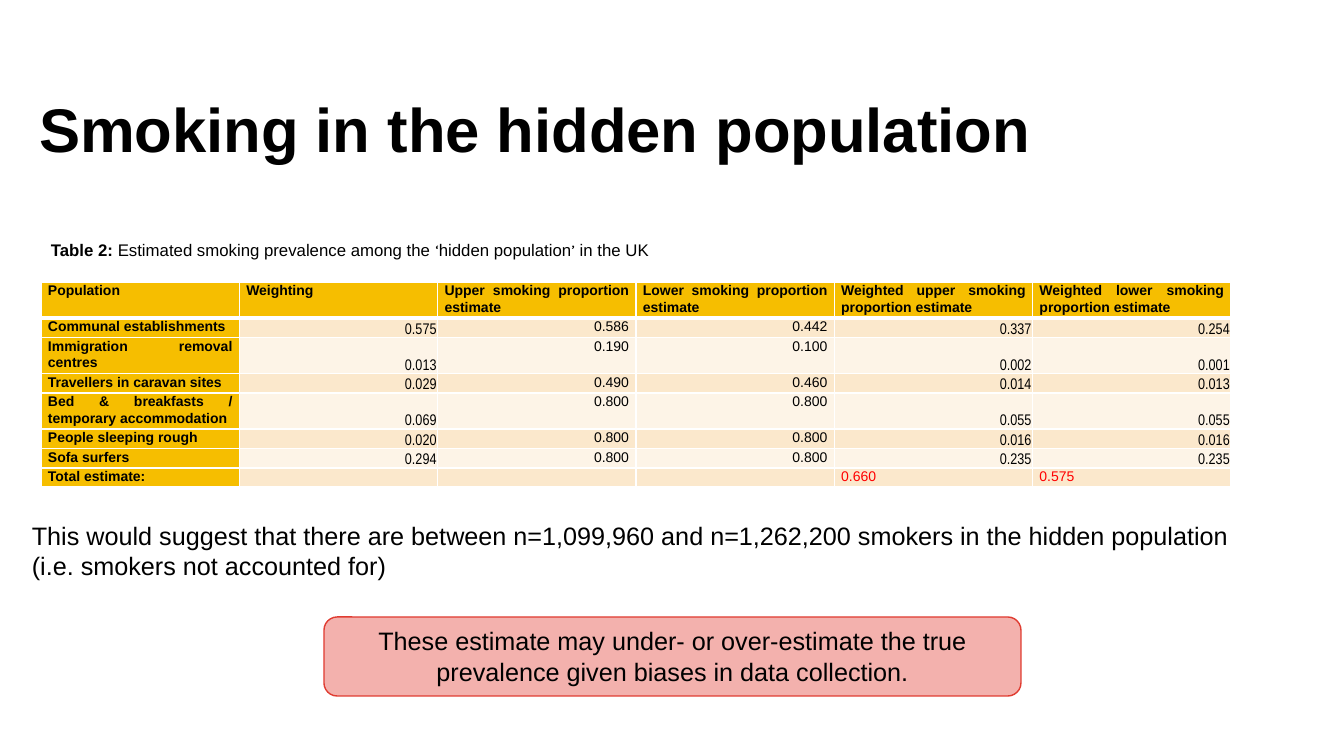
from lxml import etree
from pptx import Presentation, util as u
from pptx.dml.color import RGBColor
from pptx.enum import shapes, text
from pptx.oxml import ns

PX = 914400 / 100.8
BLACK = RGBColor(0x00, 0x00, 0x00)
WHITE = RGBColor(0xFF, 0xFF, 0xFF)
RED = RGBColor(0xFF, 0x00, 0x00)
GOLD = RGBColor(0xF6, 0xBE, 0x00)
BANDS = [RGBColor(0xFD, 0xF4, 0xE7), RGBColor(0xFB, 0xE8, 0xCC)]
PINK = RGBColor(0xF3, 0xB1, 0xAD)
CRIMSON = RGBColor(0xE0, 0x3C, 0x31)


def px(*lengths):
    return [round(length * PX) for length in lengths]


def style(span, size, bold=False, color=BLACK, name="Arial"):
    span.font.size = u.Pt(size)
    span.font.bold = bold
    span.font.color.rgb = color
    span.font.name = name


deck = Presentation()
deck.slide_width, deck.slide_height = px(1344, 756)
page = deck.slides.add_slide(deck.slide_layouts[6])

# Title and conclusion
for words, place, size, bold in [
    ("Smoking in the hidden population", (39, 99, 1111, 151), 44, True),
    ("This would suggest that there are between n=1,099,960 and n=1,262,200 smokers "
     "in the hidden population (i.e. smokers not accounted for)",
     (22, 515, 1252, 72), 18, False),
]:
    box = page.shapes.add_textbox(*px(*place))
    frame = box.text_frame
    frame.word_wrap = True
    frame.text = words
    para = frame.paragraphs[0]
    style(para.runs[0], size, bold)
    if bold:
        frame.margin_left = frame.margin_top = frame.margin_right = frame.margin_bottom = 0
        para.line_spacing = 0.9

# Table of prevalence estimates
ROWS = [
    ["Population", "Weighting", "Upper smoking proportion estimate",
     "Lower smoking proportion estimate", "Weighted upper smoking proportion estimate",
     "Weighted lower smoking proportion estimate"],
    ["Communal establishments", "0.575", "0.586", "0.442", "0.337", "0.254"],
    ["Immigration removal centres", "0.013", "0.190", "0.100", "0.002", "0.001"],
    ["Travellers in caravan sites", "0.029", "0.490", "0.460", "0.014", "0.013"],
    ["Bed & breakfasts / temporary accommodation", "0.069", "0.800", "0.800", "0.055", "0.055"],
    ["People sleeping rough", "0.020", "0.800", "0.800", "0.016", "0.016"],
    ["Sofa surfers", "0.294", "0.800", "0.800", "0.235", "0.235"],
    ["Total estimate:", "", "", "", "0.660", "0.575"],
]
TWO_LINE_ROWS = (0, 2, 4)
TOTAL_ROW = len(ROWS) - 1
table = page.shapes.add_table(len(ROWS), 6, *px(41, 282, 1190, 184)).table
for r, values in enumerate(ROWS):
    table.rows[r].height = px(33 if r in TWO_LINE_ROWS else 17)[0]
    for c, value in enumerate(values):
        cell = table.cell(r, c)
        heading = r == 0 or c == 0
        total = r == TOTAL_ROW and not heading
        narrow = not heading and not total and c in (1, 4, 5)
        cell.fill.solid()
        cell.fill.fore_color.rgb = GOLD if heading else BANDS[r % 2]
        cell.margin_left = cell.margin_right = px(1 if narrow else 7)[0]
        cell.margin_top = px(1 if narrow else 0)[0]
        cell.margin_bottom = 0

        # White cell borders, thicker under the header
        for i, side in enumerate(("lnL", "lnR", "lnT", "lnB")):
            thick = (r == 0 and side == "lnB") or (r == 1 and side == "lnT")
            border = etree.Element(ns.qn("a:" + side), w=str(u.Pt(3 if thick else 1)))
            paint = etree.SubElement(border, ns.qn("a:solidFill"))
            etree.SubElement(paint, ns.qn("a:srgbClr"), val=str(WHITE))
            cell._tc.get_or_add_tcPr().insert(i, border)

        para = cell.text_frame.paragraphs[0]
        if not value:
            para._p.get_or_add_endParaRPr().set("sz", "1000")
            continue
        para.text = value
        para.alignment = text.PP_ALIGN.JUSTIFY if heading or total else text.PP_ALIGN.RIGHT
        if narrow:
            cell.vertical_anchor = text.MSO_ANCHOR.BOTTOM
            style(para.runs[0], 11, name="Arial Narrow")
        else:
            para.line_spacing = 1.07
            para.space_after = u.Pt(8)
            style(para.runs[0], 10, heading, RED if total else BLACK)

# Table caption
caption = page.shapes.add_shape(shapes.MSO_SHAPE.RECTANGLE, *px(41, 235, 624, 30))
caption.shadow.inherit = False
caption.fill.solid()
caption.fill.fore_color.rgb = WHITE
caption.line.fill.background()
caption.text_frame.word_wrap = False
caption.text_frame.vertical_anchor = text.MSO_ANCHOR.MIDDLE
para = caption.text_frame.paragraphs[0]
para.alignment = text.PP_ALIGN.LEFT
for words, bold, name in [
    ("Table 2: ", True, "Arial"),
    ("Estimated smoking prevalence among the ", False, "Arial"),
    ("‘", False, "Karla"),
    ("hidden population", False, "Arial"),
    ("’", False, "Karla"),
    (" in the UK", False, "Arial"),
]:
    span = para.add_run()
    span.text = words
    style(span, 12, bold, name=name)

# Caveat
caveat = page.shapes.add_shape(shapes.MSO_SHAPE.ROUNDED_RECTANGLE, *px(324, 617, 697, 79))
caveat.shadow.inherit = False
caveat.fill.solid()
caveat.fill.fore_color.rgb = PINK
caveat.line.color.rgb = CRIMSON
caveat.line.width = u.Pt(1)
frame = caveat.text_frame
frame.word_wrap = True
frame.vertical_anchor = text.MSO_ANCHOR.TOP
frame.text = ("These estimate may under- or over-estimate the true prevalence "
              "given biases in data collection.")
para = frame.paragraphs[0]
para.alignment = text.PP_ALIGN.CENTER
para.space_after = u.Pt(8)
style(para.runs[0], 18)

deck.save("out.pptx")
